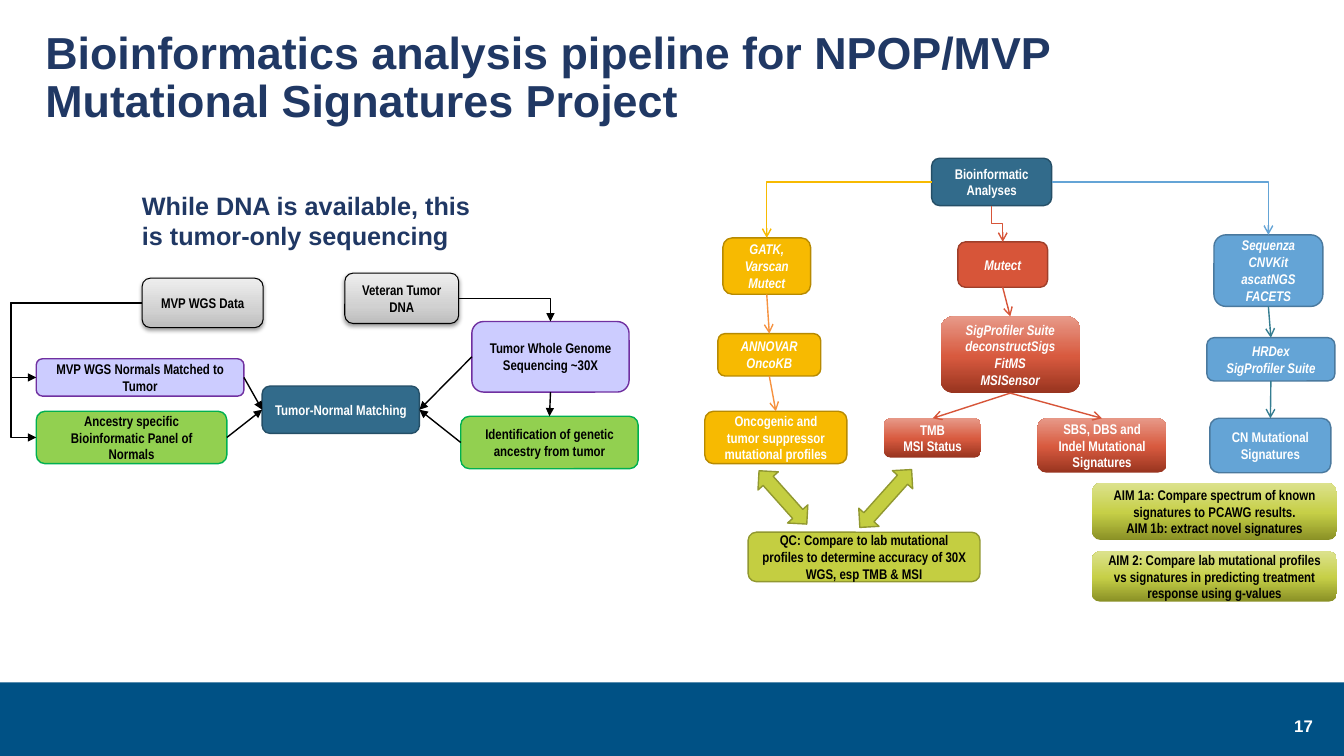
from copy import deepcopy

from lxml.etree import SubElement
from pptx import Presentation
from pptx.dml.color import RGBColor
from pptx.enum.shapes import MSO_CONNECTOR as Link, MSO_SHAPE as Preset
from pptx.enum.text import MSO_ANCHOR as Anchor, MSO_AUTO_SIZE as AutoSize, PP_ALIGN as Align
from pptx.oxml.ns import qn
from pptx.util import Inches, Pt

WHITE = RGBColor(0xFF, 0xFF, 0xFF)
BLACK = RGBColor(0x00, 0x00, 0x00)
NAVY = RGBColor(0x20, 0x38, 0x64)
FOOTER_BLUE = RGBColor(0x00, 0x51, 0x85)
TEAL, TEAL_EDGE = RGBColor(0x32, 0x6B, 0x8B), RGBColor(0x25, 0x4F, 0x67)
LILAC, PURPLE = RGBColor(0xCC, 0xCC, 0xFF), RGBColor(0x70, 0x30, 0xA0)
GREEN, GREEN_EDGE = RGBColor(0x92, 0xD0, 0x50), RGBColor(0x00, 0xB0, 0x50)
GOLD, GOLD_EDGE = RGBColor(0xF7, 0xBA, 0x01), RGBColor(0xB7, 0x8A, 0x01)
RED, RED_EDGE = RGBColor(0xD7, 0x55, 0x39), RGBColor(0x9F, 0x3F, 0x2A)
SKY, SKY_EDGE = RGBColor(0x64, 0xA4, 0xD6), RGBColor(0x4A, 0x79, 0x9E)
LIME, LIME_EDGE = RGBColor(0xC4, 0xCE, 0x41), RGBColor(0x91, 0x98, 0x30)
ORANGE = RGBColor(0xF6, 0x92, 0x40)
DARK_CYAN = RGBColor(0x35, 0x7D, 0x91)
GREY_FADE = [(0, RGBColor(0xBD, 0xBD, 0xBD)), (0.35, RGBColor(0xD1, 0xD1, 0xD1)),
             (1, RGBColor(0xEE, 0xEE, 0xEE))]
RED_FADE = [(0, RGBColor(0x98, 0x34, 0x1F)), (0.48, RGBColor(0xD8, 0x5A, 0x3F)),
            (1, RGBColor(0xE7, 0x99, 0x88))]
LIME_FADE = [(0, RGBColor(0x89, 0x90, 0x25)), (0.48, RGBColor(0xC6, 0xCF, 0x47)),
             (1, RGBColor(0xDC, 0xE2, 0x8D))]

TITLE = "Bioinformatics analysis pipeline for NPOP/MVP Mutational Signatures Project"
REMARK = "While DNA is available, this is tumor-only sequencing"
PAGE = "17"

STYLES = {
    "source": (GREY_FADE, BLACK, 0.75, BLACK),
    "sequence": (LILAC, PURPLE, 1, BLACK),
    "ancestry": (GREEN, GREEN_EDGE, 1, BLACK),
    "hub": (TEAL, TEAL_EDGE, 1, WHITE),
    "gene": (GOLD, GOLD_EDGE, 1, WHITE),
    "caller": (RED, RED_EDGE, 1, WHITE),
    "signature": (RED_FADE, None, 0, WHITE),
    "copy number": (SKY, SKY_EDGE, 1, WHITE),
    "check": (LIME, LIME_EDGE, 1, BLACK),
    "aim": (LIME_FADE, None, 0, BLACK),
}
TOOLS = {"callers", "mutect", "annotation", "suite", "cn tools", "hrdex"}
BOXES = {
    "wgs": (4.68, 3.19, 1.56, 0.7, "sequence", ["Tumor Whole Genome Sequencing ~30X"]),
    "mutect": (9.5, 2.4, 0.89, 0.45, "caller", ["Mutect"]),
    "callers": (7.17, 2.36, 0.87, 0.56, "gene", ["GATK, Varscan", "Mutect"]),
    "cn result": (12, 4.15, 1.2, 0.54, "copy number", ["CN Mutational Signatures"]),
    "cn tools": (12.04, 2.33, 1.08, 0.71, "copy number",
                 ["Sequenza", "CNVKit", "ascatNGS", "FACETS"]),
    "tumor dna": (3.42, 2.71, 1.13, 0.5, "source", ["Veteran Tumor DNA"]),
    "annotation": (7.12, 3.31, 1.02, 0.42, "gene", ["ANNOVAR", "OncoKB"]),
    "aim 1": (10.83, 4.79, 2.43, 0.57, "aim",
              ["AIM 1a: Compare spectrum of known signatures to PCAWG results.",
               "AIM 1b: extract novel signatures"]),
    "profiles": (6.99, 4.08, 1.41, 0.52, "gene",
                 ["Oncogenic and tumor suppressor mutational profiles"]),
    "suite": (9.33, 3.14, 1.38, 0.76, "signature",
              ["SigProfiler Suite", "deconstructSigs", "FitMS", "MSISensor"]),
    "hrdex": (11.97, 3.35, 1.27, 0.43, "copy number", ["HRDex", "SigProfiler Suite"]),
    "mvp data": (1.41, 2.76, 1.2, 0.49, "source", ["MVP WGS Data"]),
    "panel": (0.36, 4.08, 1.89, 0.52, "ancestry",
              ["Ancestry specific Bioinformatic Panel of Normals"]),
    "normals": (0.36, 3.56, 2.06, 0.37, "sequence", ["MVP WGS Normals Matched to Tumor"]),
    "tmb": (8.77, 4.15, 0.96, 0.39, "signature", ["TMB", "MSI Status"]),
    "qc": (7.42, 5.28, 2.3, 0.49, "check",
           ["QC: Compare to lab mutational profiles to determine accuracy of 30X WGS, "
            "esp TMB & MSI"]),
    "sbs": (10.29, 4.15, 1.28, 0.54, "signature",
            ["SBS, DBS and Indel Mutational Signatures"]),
    "aim 2": (10.83, 5.47, 2.43, 0.5, "aim",
              ["AIM 2: Compare lab mutational profiles vs signatures in predicting "
               "treatment response using g-values"]),
    "matching": (2.6, 3.83, 1.56, 0.47, "hub", ["Tumor-Normal Matching"]),
    "analyses": (9.24, 1.57, 1.19, 0.47, "hub", ["Bioinformatic Analyses"]),
    "identification": (4.57, 4.13, 1.76, 0.52, "ancestry",
                       ["Identification of genetic ancestry from tumor"]),
}
TOP, LEFT, BOTTOM, RIGHT = range(4)
LINKS = [
    ("analyses", RIGHT, "cn tools", TOP, SKY, "arrow", "corner"),
    ("analyses", LEFT, "callers", TOP, GOLD, "arrow", "corner"),
    ("analyses", BOTTOM, "mutect", TOP, RED, "arrow", "drop"),
    ("callers", BOTTOM, "annotation", TOP, ORANGE, "arrow", "straight"),
    ("annotation", BOTTOM, "profiles", TOP, ORANGE, "arrow", "straight"),
    ("mutect", BOTTOM, "suite", TOP, RED, "arrow", "straight"),
    ("suite", BOTTOM, "tmb", TOP, RED, "arrow", "straight"),
    ("suite", BOTTOM, "sbs", TOP, RED, "arrow", "straight"),
    ("cn tools", BOTTOM, "hrdex", TOP, DARK_CYAN, "arrow", "straight"),
    ("hrdex", BOTTOM, "cn result", TOP, DARK_CYAN, "arrow", "straight"),
    ("wgs", BOTTOM, "identification", TOP, BLACK, "triangle", "straight"),
    ("panel", RIGHT, "matching", LEFT, BLACK, "triangle", "straight"),
    ("identification", LEFT, "matching", RIGHT, BLACK, "triangle", "straight"),
    ("normals", RIGHT, "matching", LEFT, BLACK, "triangle", "straight"),
    ("wgs", LEFT, "matching", RIGHT, BLACK, "triangle", "straight"),
    ("mvp data", LEFT, "normals", LEFT, BLACK, "triangle", "loop"),
    ("mvp data", LEFT, "panel", LEFT, BLACK, "triangle", "loop"),
    ("tumor dna", RIGHT, "wgs", TOP, BLACK, "triangle", "corner"),
]
QC_ARROWS = [(7.41, 4.8, 0.71, 0.27, 48.2), (8.4, 4.81, 0.77, 0.27, 311.8)]


def write(frame, lines, size, color, font="Arial", align=Align.LEFT, italic=False):
    """Write each line as a bold paragraph."""
    frame.word_wrap = True
    for index, line in enumerate(lines):
        paragraph = frame.add_paragraph() if index else frame.paragraphs[0]
        paragraph.alignment = align
        run = paragraph.add_run()
        run.text = line
        run.font.size, run.font.name = Pt(size), font
        run.font.bold, run.font.italic = True, italic
        run.font.color.rgb = color


def paint(shape, fill, edge=None, width=1):
    """Give a shape a flat or fading fill and an optional outline."""
    shape.shadow.inherit = False
    if isinstance(fill, list):
        shape.fill.gradient()
        shape.fill.gradient_angle = 90
        stop_list = next(shape._element.spPr.iter(qn("a:gsLst")))
        stop_list.append(deepcopy(stop_list[0]))
        for stop, (position, color) in zip(shape.fill.gradient_stops, fill):
            stop.position, stop.color.rgb = position, color
    else:
        shape.fill.solid()
        shape.fill.fore_color.rgb = fill
    if edge is None:
        shape.line.fill.background()
    else:
        shape.line.color.rgb, shape.line.width = edge, Pt(width)


def add_soft_shadow(shape):
    """Drop a soft shadow below a shape."""
    effects = shape._element.spPr.find(qn("a:effectLst"))
    shadow = SubElement(effects, qn("a:outerShdw"), blurRad=str(Pt(3.1)), dist=str(Pt(1.6)),
                        dir="5400000", rotWithShape="0")
    tint = SubElement(shadow, qn("a:srgbClr"), val="000000")
    SubElement(tint, qn("a:alpha"), val="38000")


def bend(connector, route):
    """Shape an elbow connector as a corner, a loop or a vertical drop."""
    geometry = connector._element.spPr.find(qn("a:prstGeom"))
    if route == "corner":
        geometry.set("prst", "bentConnector2")
    elif route == "loop":
        SubElement(geometry.get_or_add_avLst(), qn("a:gd"), name="adj1", fmla="val 123900")
    elif route == "drop":
        width, height = connector.width, connector.height
        connector.left += (width - height) // 2
        connector.top += (height - width) // 2
        connector.width, connector.height = height, width
        frame = connector._element.spPr.find(qn("a:xfrm"))
        frame.set("rot", "16200000")
        frame.set("flipH", "1")


def main():
    """Build the pipeline slide."""
    deck = Presentation()
    deck.slide_width, deck.slide_height = Inches(13.33), Inches(7.5)
    slide = deck.slides.add_slide(deck.slide_layouts[5])
    shapes = slide.shapes

    footer = shapes.add_shape(Preset.RECTANGLE, 0, Inches(6.77), deck.slide_width, Inches(0.73))
    paint(footer, FOOTER_BLUE)
    page = shapes.add_textbox(*map(Inches, (10.12, 7.05, 3, 0.4)))
    write(page.text_frame, [PAGE], 12, WHITE, align=Align.RIGHT)

    title = shapes.title
    title.left, title.top, title.width, title.height = map(Inches, (0.35, 0.06, 12.21, 1.45))
    title.text_frame.auto_size = AutoSize.NONE
    title.text_frame.vertical_anchor = Anchor.MIDDLE
    write(title.text_frame, [TITLE], 32, NAVY)
    title.text_frame.paragraphs[0].line_spacing = 0.9

    remark = shapes.add_textbox(*map(Inches, (1.31, 1.84, 3.7, 0.71)))
    write(remark.text_frame, [REMARK], 18, NAVY)

    steps = {}
    for name, (*place, style, lines) in BOXES.items():
        fill, edge, width, ink = STYLES[style]
        step = shapes.add_shape(Preset.ROUNDED_RECTANGLE, *map(Inches, place))
        paint(step, fill, edge, width)
        if style == "source":
            add_soft_shadow(step)
        step.text_frame.vertical_anchor = Anchor.MIDDLE
        write(step.text_frame, lines, 10, ink, "Arial Narrow", Align.CENTER, name in TOOLS)
        steps[name] = step

    for *place, angle in QC_ARROWS:
        qc_arrow = shapes.add_shape(Preset.LEFT_RIGHT_ARROW, *map(Inches, place))
        paint(qc_arrow, LIME, LIME_EDGE)
        qc_arrow.rotation = angle

    for start, start_side, end, end_side, color, head, route in LINKS:
        kind = Link.STRAIGHT if route == "straight" else Link.ELBOW
        connector = shapes.add_connector(kind, 0, 0, 0, 0)
        connector.begin_connect(steps[start], start_side)
        connector.end_connect(steps[end], end_side)
        bend(connector, route)
        connector.line.color.rgb, connector.line.width = color, Pt(1)
        SubElement(connector.line._get_or_add_ln(), qn("a:tailEnd"), type=head)
        SubElement(connector._element.spPr, qn("a:effectLst"))

    deck.save("out.pptx")


if __name__ == "__main__":
    main()
